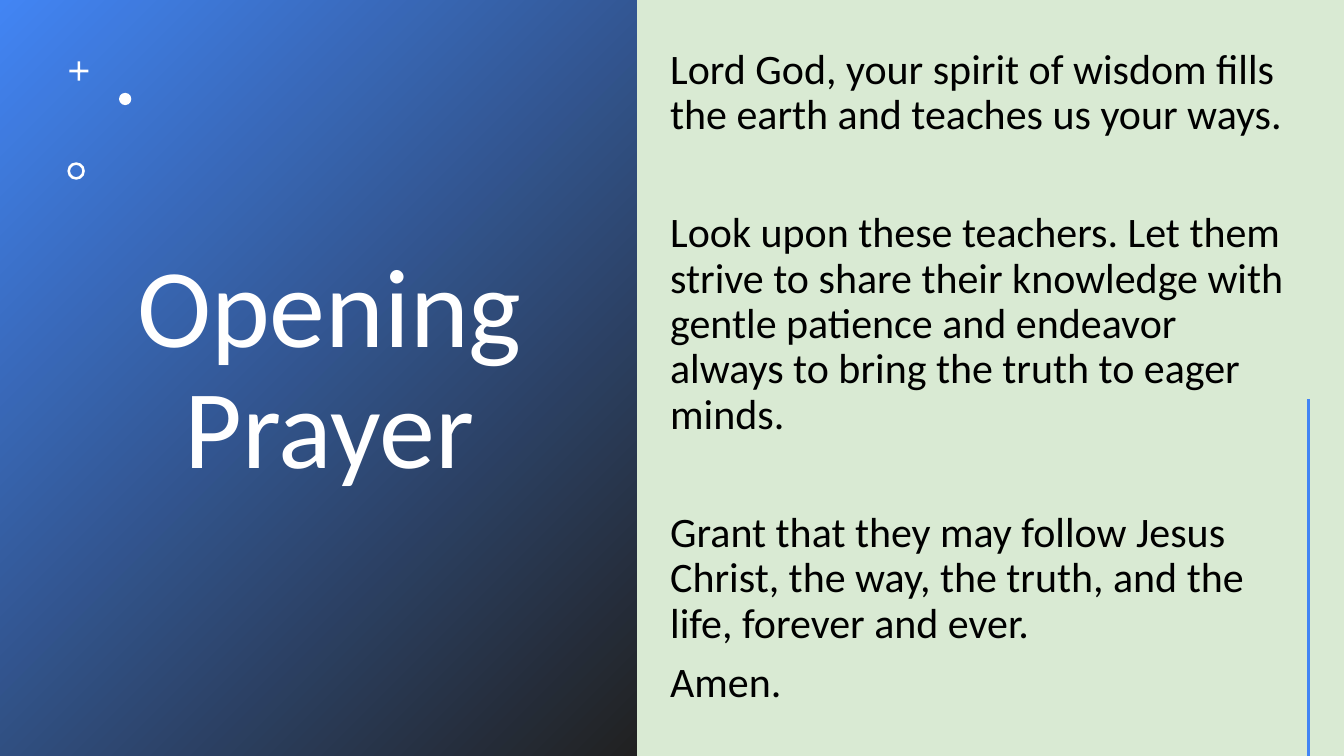
from lxml import etree
from pptx import Presentation
from pptx.dml.color import RGBColor
from pptx.enum.shapes import MSO_CONNECTOR, MSO_SHAPE as Preset
from pptx.enum.text import MSO_ANCHOR as Anchor, PP_ALIGN as Align
from pptx.oxml.ns import qn
from pptx.util import Cm, Pt

BLUE = RGBColor(0x42, 0x85, 0xF4)
CHARCOAL = RGBColor(0x21, 0x21, 0x21)
PALE_GREEN = RGBColor(0xD9, 0xEA, 0xD3)
WHITE = RGBColor(0xFF, 0xFF, 0xFF)
BLACK = RGBColor(0x00, 0x00, 0x00)

FONT = "Calibri"
SLIDE_WIDTH, SLIDE_HEIGHT = Cm(33.87), Cm(19.05)

# Each verse of the prayer with its space before in points
VERSES = [
    ("Lord God, your spirit of wisdom fills the earth and teaches us your ways.", 0),
    ("Look upon these teachers. Let them strive to share their knowledge with "
     "gentle patience and endeavor always to bring the truth to eager minds.", 52),
    ("Grant that they may follow Jesus Christ, the way, the truth, and the life, "
     "forever and ever.", 52),
    ("Amen.", 10),
]


def add_gradient_panel(slide, width):
    panel = slide.shapes.add_shape(Preset.RECTANGLE, 0, 0, width, SLIDE_HEIGHT)
    panel.shadow.inherit = False
    panel.line.fill.background()
    panel.fill.gradient()
    panel.fill.gradient_angle = 315
    for stop, color in zip(panel.fill.gradient_stops, (BLUE, CHARCOAL)):
        stop.color.rgb = color


def add_ornament(slide, preset, left, top, size, adjustment=None):
    shape = slide.shapes.add_shape(preset, left, top, size, size)
    shape.shadow.inherit = False
    shape.fill.solid()
    shape.fill.fore_color.rgb = WHITE
    shape.line.fill.background()
    if adjustment is not None:
        shape.adjustments[0] = adjustment


def add_text(slide, left, top, width, height, verses, size, color, align):
    text_frame = slide.shapes.add_textbox(left, top, width, height).text_frame
    text_frame.word_wrap = True
    text_frame.vertical_anchor = Anchor.MIDDLE
    for index, (text, space_before) in enumerate(verses):
        paragraph = text_frame.add_paragraph() if index else text_frame.paragraphs[0]
        paragraph.text = text
        paragraph.alignment = align
        paragraph.line_spacing = 0.9
        if space_before:
            paragraph.space_before = Pt(space_before)
        for run in paragraph.runs:
            run.font.name = FONT
            run.font.size = Pt(size)
            run.font.color.rgb = color
    return text_frame


def add_vertical_line(slide, left, top, bottom):
    line = slide.shapes.add_connector(MSO_CONNECTOR.STRAIGHT, left, top, left, bottom)
    line.line.color.rgb = BLUE
    line.line.width = Pt(2)
    etree.SubElement(line._element.spPr, qn("a:effectLst"))


def main():
    presentation = Presentation()
    presentation.slide_width, presentation.slide_height = SLIDE_WIDTH, SLIDE_HEIGHT
    slide = presentation.slides.add_slide(presentation.slide_layouts[6])
    slide.background.fill.solid()
    slide.background.fill.fore_color.rgb = PALE_GREEN

    # Title panel
    add_gradient_panel(slide, Cm(16.05))
    add_text(slide, Cm(2.16), Cm(1.07), Cm(12.29), Cm(16.59),
             [("Opening Prayer", 0)], 80, WHITE, Align.CENTER)

    # Plus, dot and ring in the corner
    add_ornament(slide, Preset.CROSS, Cm(1.75), Cm(1.55), Cm(0.48), 0.43)
    add_ornament(slide, Preset.OVAL, Cm(3), Cm(2.34), Cm(0.31))
    add_ornament(slide, Preset.DONUT, Cm(1.7), Cm(4.09), Cm(0.44), 0.15)

    # Prayer and accent line
    prayer = add_text(slide, Cm(16.64), Cm(0.58), Cm(16.33), Cm(17.86),
                      VERSES, 30, BLACK, Align.LEFT)
    prayer.paragraphs[-1].space_after = Pt(16)
    add_vertical_line(slide, Cm(32.97), Cm(10.06), SLIDE_HEIGHT)

    presentation.save("out.pptx")


if __name__ == "__main__":
    main()
